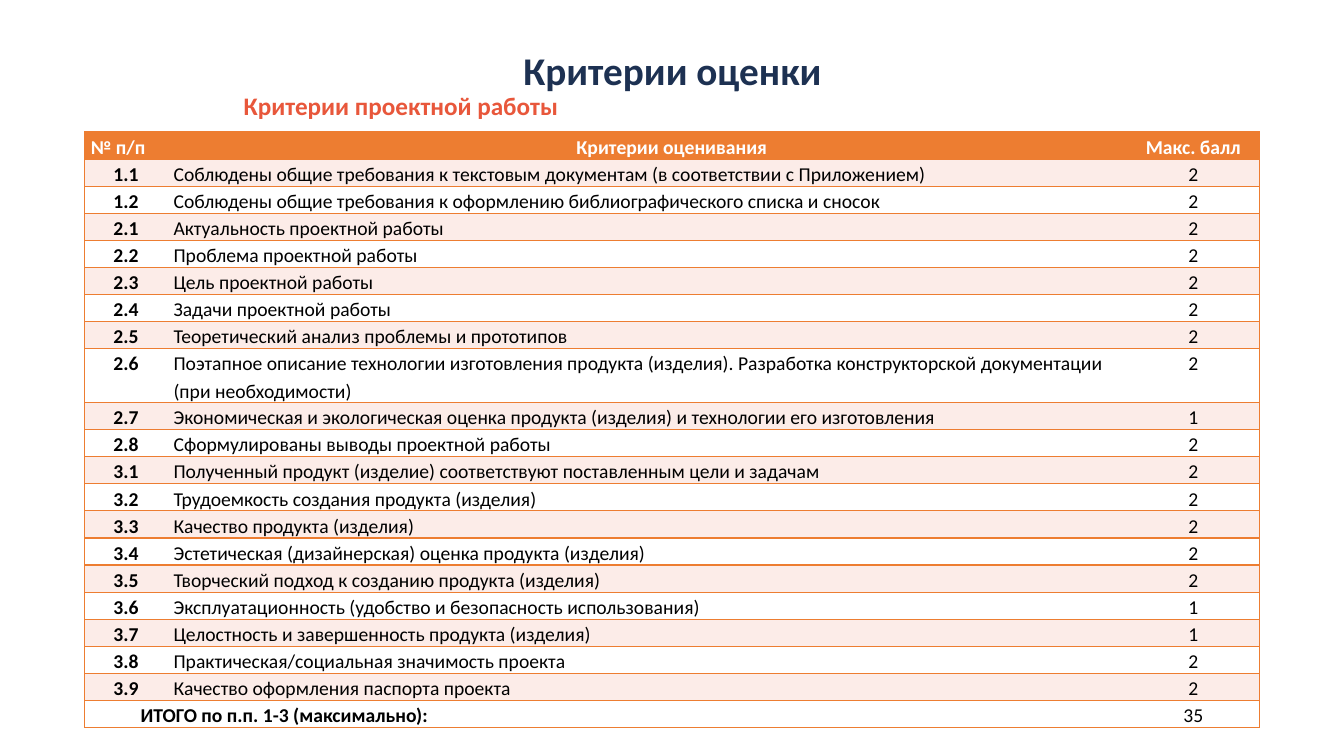
import pptx
import pptx.dml.color
import pptx.enum.text
import pptx.oxml.ns
import pptx.util
from lxml import etree

Pt = pptx.util.Pt
ALIGN = pptx.enum.text.PP_ALIGN
ANCHOR = pptx.enum.text.MSO_ANCHOR
FONT = "Calibri"
ORANGE, BLUSH, WHITE, BLACK = "ED7D31", "FCECE8", "FFFFFF", "000000"
NAVY, CORAL = "1D3152", "E8573B"
TABLE_LEFT, TABLE_TOP = 60.5, 94.3
COLUMN_WIDTHS = (59, 685.4, 95)
LINE_HEIGHT = 19.3
FIRST_LINE, SCORE_SHIFT = 35.4, -5
LONG_CRITERION = "2.6"
HEADERS = ("№ п/п", "Критерии оценивания", "Макс. балл")
CRITERIA = [
    ("1.1", "Соблюдены общие требования к текстовым документам (в соответствии с Приложением)", 2),
    ("1.2", "Соблюдены общие требования к оформлению библиографического списка и сносок", 2),
    ("2.1", "Актуальность проектной работы", 2),
    ("2.2", "Проблема проектной работы", 2),
    ("2.3", "Цель проектной работы", 2),
    ("2.4", "Задачи проектной работы", 2),
    ("2.5", "Теоретический анализ проблемы и прототипов", 2),
    (LONG_CRITERION, "Поэтапное описание технологии изготовления продукта (изделия). "
     "Разработка конструкторской документации (при необходимости)", 2),
    ("2.7", "Экономическая и экологическая оценка продукта (изделия) и технологии его изготовления", 1),
    ("2.8", "Сформулированы выводы проектной работы", 2),
    ("3.1", "Полученный продукт (изделие) соответствуют поставленным цели и задачам", 2),
    ("3.2", "Трудоемкость создания продукта (изделия)", 2),
    ("3.3", "Качество продукта (изделия)", 2),
    ("3.4", "Эстетическая (дизайнерская) оценка продукта (изделия)", 2),
    ("3.5", "Творческий подход к созданию продукта (изделия)", 2),
    ("3.6", "Эксплуатационность (удобство и безопасность использования)", 1),
    ("3.7", "Целостность и завершенность продукта (изделия)", 1),
    ("3.8", "Практическая/социальная значимость проекта", 2),
    ("3.9", "Качество оформления паспорта проекта", 2),
]


def rgb(value):
    """Return the colour for a hex string."""
    return pptx.dml.color.RGBColor.from_string(value)


def write(frame, text, size, color, bold=False, align=ALIGN.LEFT, spacing=1.15, indent=0):
    """Put one formatted paragraph into a text frame."""
    frame.text = text
    paragraph = frame.paragraphs[0]
    paragraph.alignment = align
    paragraph.line_spacing = spacing
    if indent:
        paragraph._p.get_or_add_pPr().set("indent", str(Pt(indent)))
    font = paragraph.runs[0].font
    font.name, font.size, font.bold = FONT, Pt(size), bold
    font.color.rgb = rgb(color)


def add_heading(slide, box, text, size, color, **style):
    """Add a wrapped bold heading and return its text frame."""
    frame = slide.shapes.add_textbox(*(Pt(length) for length in box)).text_frame
    frame.word_wrap = True
    write(frame, text, size, color, bold=True, **style)
    return frame


def draw_borders(cell, sides):
    """Draw orange lines on the given sides and clear the others."""
    properties = cell._tc.get_or_add_tcPr()
    qn = pptx.oxml.ns.qn
    for side in "LRTB":
        line = etree.SubElement(properties, qn(f"a:ln{side}"), w=str(Pt(1)))
        if side in sides:
            fill = etree.SubElement(line, qn("a:solidFill"))
            etree.SubElement(fill, qn("a:srgbClr"), val=ORANGE)
        else:
            etree.SubElement(line, qn("a:noFill"))


def fill_row(table, index, fill, texts, styles):
    """Fill one table row with text, colour and borders."""
    for cell, sides, text, style in zip(table.rows[index].cells, ("LTB", "TB", "RTB"), texts, styles):
        draw_borders(cell, sides)
        cell.fill.solid()
        cell.fill.fore_color.rgb = rgb(fill)
        cell.margin_left = cell.margin_right = Pt(4.5)
        cell.margin_top = cell.margin_bottom = 0
        if text:
            write(cell.text_frame, text, 14, **style)


def add_criteria_table(slide):
    """Add the table of criteria with its header and total."""
    total_row = len(CRITERIA) + 1
    table = slide.shapes.add_table(
        total_row + 1, len(COLUMN_WIDTHS), Pt(TABLE_LEFT), Pt(TABLE_TOP),
        Pt(sum(COLUMN_WIDTHS)), Pt(LINE_HEIGHT * (total_row + 2))).table
    for column, width in zip(table.columns, COLUMN_WIDTHS):
        column.width = Pt(width)
    for row in table.rows:
        row.height = Pt(LINE_HEIGHT)

    header = dict(color=WHITE, bold=True)
    fill_row(table, 0, ORANGE, HEADERS, (
        header,
        dict(header, align=ALIGN.CENTER, indent=FIRST_LINE),
        dict(header, align=ALIGN.CENTER)))

    plain = dict(color=BLACK)
    centred = dict(plain, align=ALIGN.CENTER)
    styles = (dict(centred, bold=True), plain, dict(centred, indent=SCORE_SHIFT))
    for index, (number, criterion, score) in enumerate(CRITERIA, 1):
        fill_row(table, index, BLUSH if index % 2 else WHITE, (number, criterion, str(score)), styles)
        if number == LONG_CRITERION:
            table.rows[index].height = Pt(2 * LINE_HEIGHT)

    table.cell(total_row, 0).merge(table.cell(total_row, 1))
    total = str(sum(score for _, _, score in CRITERIA))
    fill_row(table, total_row, WHITE, ("ИТОГО по п.п. 1-3 (максимально):", "", total),
             (dict(plain, bold=True, indent=FIRST_LINE), plain, centred))


def main():
    """Build and save the slide of grading criteria."""
    deck = pptx.Presentation()
    deck.slide_width, deck.slide_height = Pt(960), Pt(540)
    slide = deck.slides.add_slide(deck.slide_layouts[6])
    title = add_heading(slide, (60.5, 27.4, 839.5, 45.4), "Критерии оценки", 28, NAVY,
                        align=ALIGN.CENTER, spacing=1.0)
    title.vertical_anchor = ANCHOR.MIDDLE
    title.margin_left = title.margin_right = title.margin_top = title.margin_bottom = Pt(3.6)
    subtitle = add_heading(slide, (167, 57.6, 732.2, 31), "Критерии проектной работы", 18, CORAL)
    subtitle.auto_size = pptx.enum.text.MSO_AUTO_SIZE.SHAPE_TO_FIT_TEXT
    add_criteria_table(slide)
    deck.save("out.pptx")


if __name__ == "__main__":
    main()
